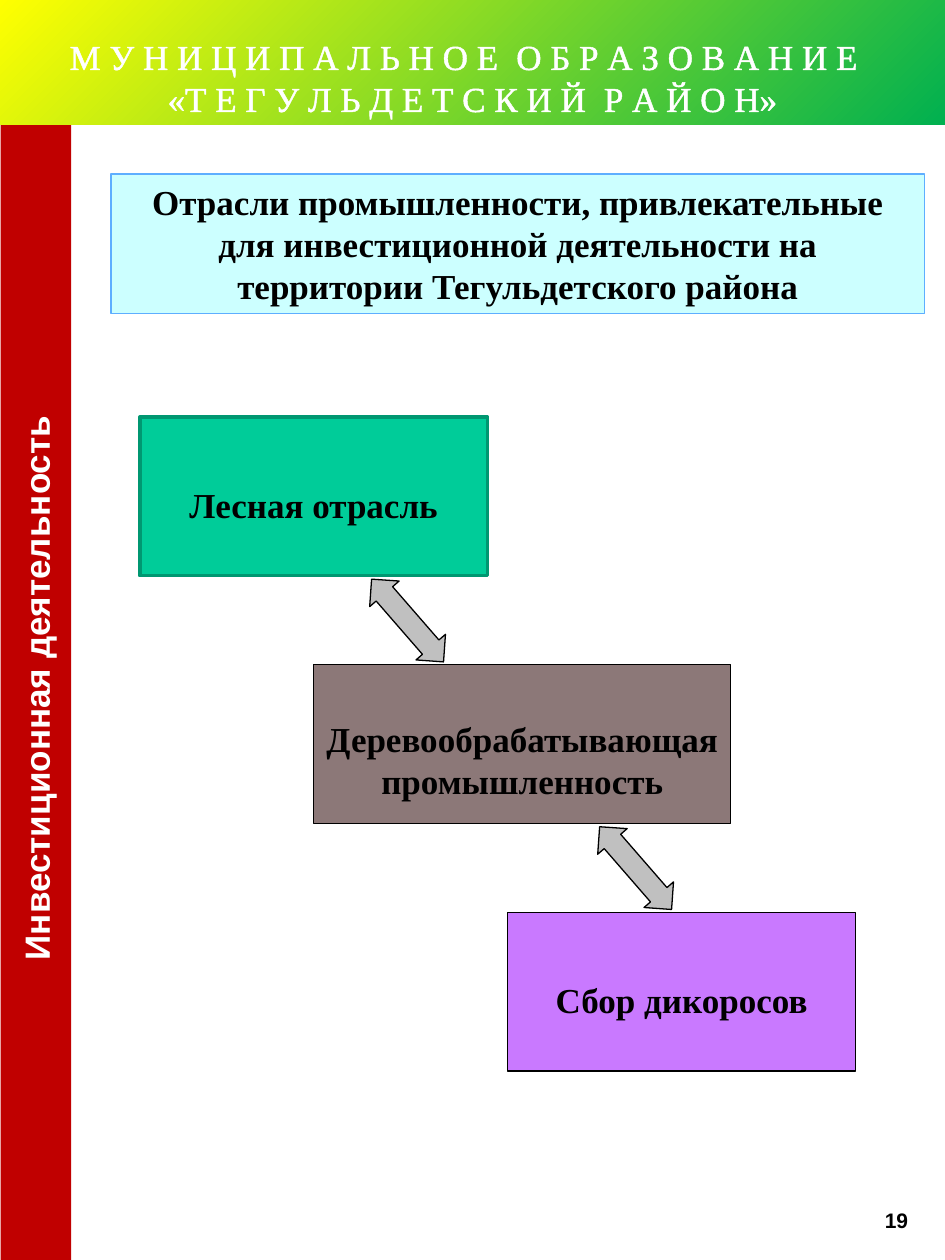
import dataclasses
import typing

import lxml.etree
import pptx
import pptx.dml.color
import pptx.enum.shapes
import pptx.enum.text
import pptx.oxml.ns
import pptx.util

RGB = pptx.dml.color.RGBColor
KIND = pptx.enum.shapes.MSO_SHAPE
ALIGN = pptx.enum.text.PP_ALIGN
ANCHOR = pptx.enum.text.MSO_ANCHOR

BLACK = RGB(0x00, 0x00, 0x00)
WHITE = RGB(0xFF, 0xFF, 0xFF)
RED = RGB(0xC0, 0x00, 0x00)
TEAL = RGB(0x00, 0xCC, 0x99)
PINE = RGB(0x00, 0x97, 0x71)
BROWN = RGB(0x8C, 0x78, 0x78)
LILAC = RGB(0xC9, 0x79, 0xFF)
GRAY = RGB(0xC0, 0xC0, 0xC0)
CYAN = RGB(0xCC, 0xFF, 0xFF)
BLUE = RGB(0x5E, 0xAE, 0xFF)
GREEN = RGB(0x00, 0xB0, 0x50)
YELLOW = RGB(0xFF, 0xFF, 0x00)

SERIF = "Times New Roman"
SANS = "Arial"
WIDE, TALL = pptx.util.Inches(7.5), pptx.util.Inches(10)
COLS, ROWS = 750, 1000
STEP = 196.5


@dataclasses.dataclass
class Area:
    left: float
    top: float
    width: float
    height: float

    def place(self) -> tuple[int, int, int, int]:
        col, row = WIDE / COLS, TALL / ROWS
        return (round(self.left * col), round(self.top * row),
                round(self.width * col), round(self.height * row))


@dataclasses.dataclass
class Branch:
    text: str
    left: float
    width: float
    fill: RGB
    edge: RGB
    line: float
    pad: float


BRANCHES = [
    Branch("Лесная отрасль", 111, 276, TEAL, PINE, 2, 18),
    Branch("Деревообрабатывающая промышленность", 249, 331, BROWN, BLACK, 0.75, 30),
    Branch("Сбор дикоросов", 403, 276, LILAC, BLACK, 0.75, 18),
]
ARROWS = [308, 489]
BANNER = [
    ["М У Н И Ц И П А Л Ь Н О Е", "О Б Р А З О В А Н И Е", ""],
    ["«Т Е Г У Л Ь Д Е Т С К И Й", "Р А Й О Н»"],
]


def paint(shape: typing.Any, fill: RGB, edge: RGB | None = None, line: float = 0.75) -> None:
    shape.fill.solid()
    shape.fill.fore_color.rgb = fill
    if edge is None:
        shape.line.fill.background()
    else:
        shape.line.color.rgb = edge
        shape.line.width = pptx.util.Pt(line)


def draw(slide: typing.Any, kind: KIND, area: Area) -> typing.Any:
    shape = slide.shapes.add_shape(kind, *area.place())
    shape.shadow.inherit = False
    return shape


def frame(shape: typing.Any, pad: float = 5) -> typing.Any:
    body = shape.text_frame
    body.word_wrap = True
    body.auto_size = pptx.enum.text.MSO_AUTO_SIZE.NONE
    body.vertical_anchor = ANCHOR.MIDDLE
    body.margin_left = body.margin_right = pptx.util.Inches(0.1)
    body.margin_top = round(pad * TALL / ROWS)
    body.margin_bottom = pptx.util.Inches(0.05)
    para = body.paragraphs[0]
    para.alignment = ALIGN.CENTER
    return para


def write(para: typing.Any, text: str, face: str = SERIF, size: float = 20,
          color: RGB = BLACK, bold: bool = True) -> typing.Any:
    run = para.add_run()
    run.text = text
    run.font.name = face
    run.font.size = pptx.util.Pt(size)
    run.font.color.rgb = color
    run.font.bold = bold
    return run


def outline(run: typing.Any, color: RGB, width: float) -> None:
    name = pptx.oxml.ns.qn
    line = lxml.etree.Element(name("a:ln"), w=str(pptx.util.Pt(width)))
    fill = lxml.etree.SubElement(line, name("a:solidFill"))
    lxml.etree.SubElement(fill, name("a:srgbClr"), val=str(color))
    run.font._element.insert(0, line)


def add_banner(slide: typing.Any) -> None:
    shape = draw(slide, KIND.RECTANGLE, Area(0, 0, COLS, 99))
    shape.fill.gradient()
    shape.fill.gradient_angle = 135
    for stop, color in zip(shape.fill.gradient_stops, (GREEN, YELLOW)):
        stop.color.rgb = color
    shape.line.fill.background()
    para = frame(shape, 28)
    for row, words in enumerate(BANNER):
        if row:
            para.add_line_break()
        for spot, word in enumerate(words):
            if spot:
                gap = write(para, " ", color=WHITE, bold=False)
                gap.font._element.set("spc", "500")
            if word:
                outline(write(para, word, color=WHITE, bold=False), WHITE, 1.45)


def add_title(slide: typing.Any) -> None:
    title = slide.shapes.title
    title.left, title.top, title.width, title.height = Area(88, 138, 646, 111).place()
    paint(title, CYAN, BLUE)
    write(frame(title), "Отрасли промышленности, привлекательные для инвестиционной "
                        "деятельности на территории Тегульдетского района")


def main() -> None:
    deck = pptx.Presentation()
    deck.slide_width, deck.slide_height = WIDE, TALL
    slide = deck.slides.add_slide(deck.slide_layouts[5])

    side = draw(slide, KIND.RECTANGLE, Area(-426, 518, 909, 56))
    side.rotation = 270
    paint(side, RED)
    write(frame(side), "Инвестиционная деятельность", SANS, color=WHITE)

    page = slide.shapes.add_textbox(*Area(690, 953, 43, 30).place())
    write(frame(page), "19", SANS, 12)

    for row, branch in enumerate(BRANCHES):
        area = Area(branch.left, 331 + row * STEP, branch.width, 126)
        box = draw(slide, KIND.RECTANGLE, area)
        paint(box, branch.fill, branch.edge, branch.line)
        write(frame(box, branch.pad), branch.text)

    for row, left in enumerate(ARROWS):
        arrow = draw(slide, KIND.UP_DOWN_ARROW, Area(left, 449 + row * STEP, 31, 87))
        arrow.rotation = 319
        arrow.adjustments[0], arrow.adjustments[1] = 0.5, 0.56
        paint(arrow, GRAY, BLACK)

    add_title(slide)
    add_banner(slide)
    deck.save("out.pptx")


if __name__ == "__main__":
    main()
